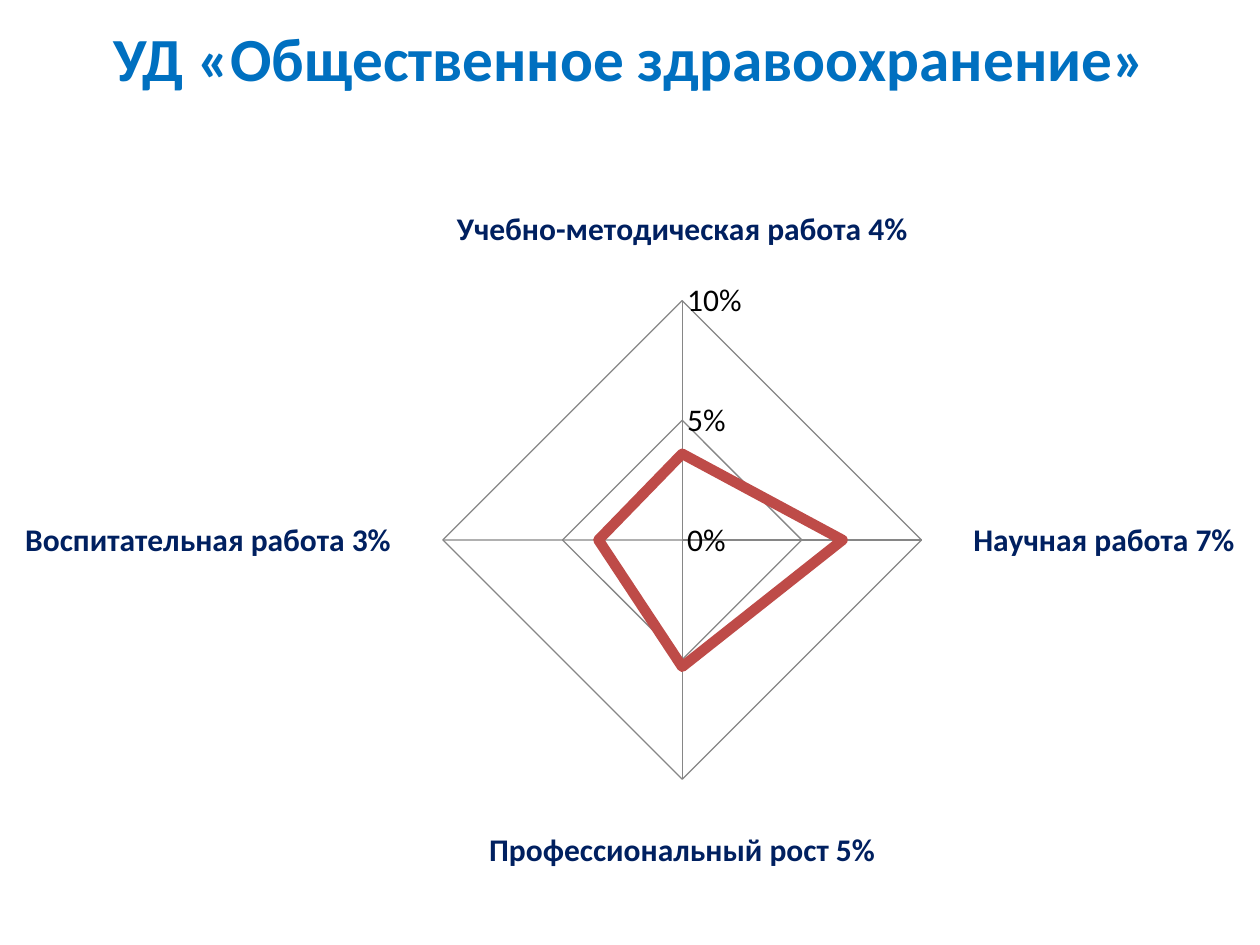
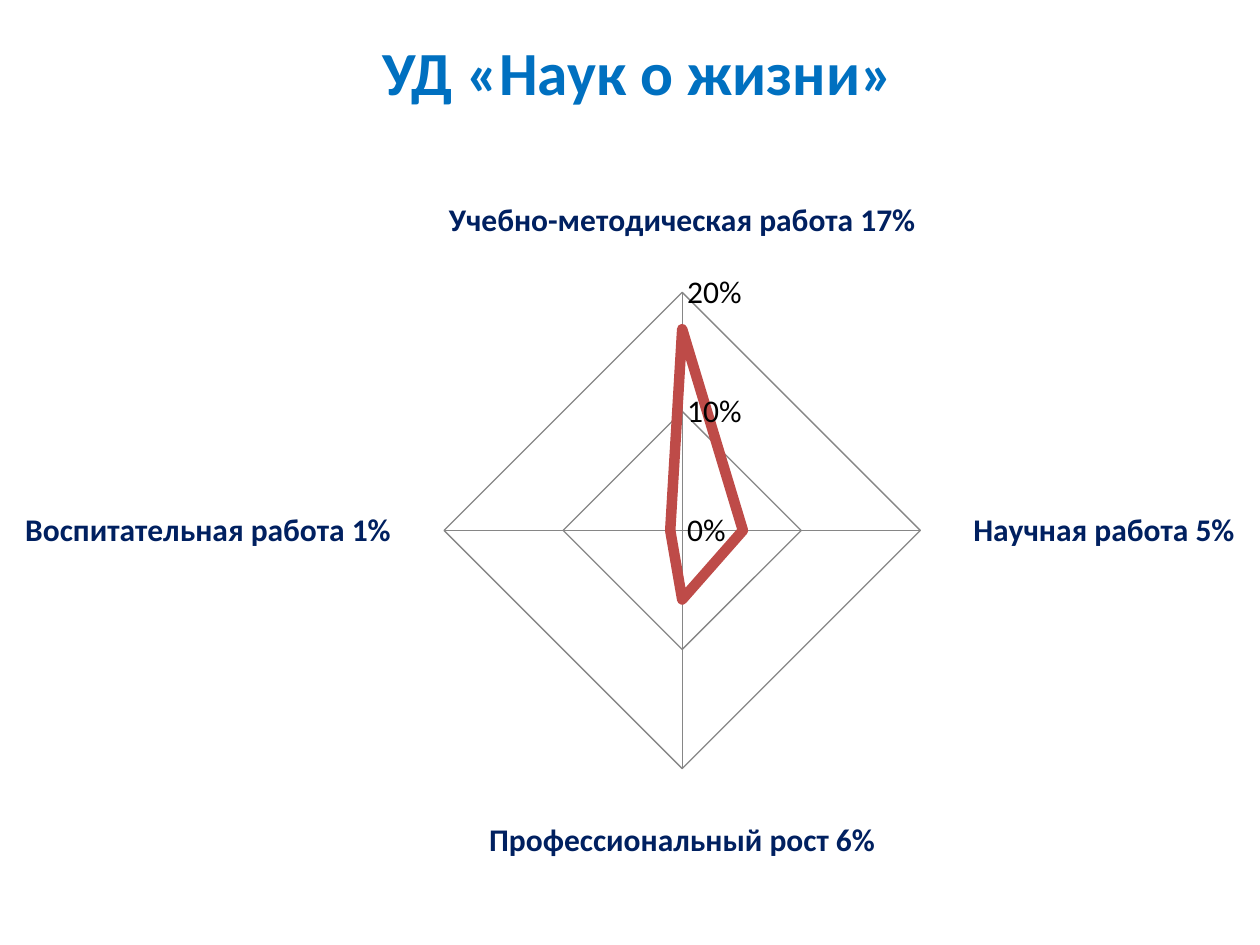
from pptx import Presentation
from pptx.chart.data import CategoryChartData
from pptx.dml.color import RGBColor
from pptx.enum.chart import XL_CHART_TYPE, XL_TICK_MARK
from pptx.enum.text import MSO_ANCHOR, MSO_AUTO_SIZE, PP_ALIGN
from pptx.util import Emu, Pt

RADAR = XL_CHART_TYPE.RADAR
NO_TICK = XL_TICK_MARK.NONE
MIDDLE = MSO_ANCHOR.MIDDLE
NO_FIT = MSO_AUTO_SIZE.NONE
CENTER = PP_ALIGN.CENTER

EMU_PER_PX = 914400 / 126
WIDTH, HEIGHT = 1260, 945
TITLE_ONLY = 5


class Theme:
    font = "Calibri"
    title_size, chart_size = Pt(35), Pt(18)
    grid_width, series_width = Pt(0.75), Pt(6)
    title = RGBColor.from_string("0070C0")
    category = RGBColor.from_string("002060")
    value = RGBColor.from_string("000000")
    grid = RGBColor.from_string("868686")
    series = RGBColor.from_string("BE4B48")


SLIDES = [
    {
        "title": "УД «Общественное здравоохранение»",
        "title_box": (0, 0, 1260, 115),
        "chart_top": 135,
        "scale_max": 0.1,
        "scores": [
            ("Учебно-методическая работа 4%", 0.036),
            ("Научная работа 7%", 0.067),
            ("Профессиональный рост 5%", 0.053),
            ("Воспитательная работа 3%", 0.035),
        ],
    },
    {
        "title": "УД «Наук о жизни»",
        "title_box": (71, 26, 1134, 90),
        "chart_top": 116,
        "scale_max": 0.2,
        "scores": [
            ("Учебно-методическая работа 17%", 0.169),
            ("Научная работа 5%", 0.051),
            ("Профессиональный рост 6%", 0.058),
            ("Воспитательная работа 1%", 0.01),
        ],
    },
]


def px(*lengths):
    return [Emu(round(n * EMU_PER_PX)) for n in lengths]


def set_all(target, **values):
    for name, value in values.items():
        setattr(target, name, value)


def set_font(font, size, color, bold):
    set_all(font, name=Theme.font, size=size, bold=bold)
    font.color.rgb = color


def set_line(line, color, width):
    line.color.rgb = color
    line.width = width


def add_title(slide, text, box):
    sp = slide.shapes.title
    left, top, width, height = px(*box)
    set_all(sp, left=left, top=top, width=width, height=height)
    tf = sp.text_frame
    set_all(tf, vertical_anchor=MIDDLE, word_wrap=True, auto_size=NO_FIT)
    p = tf.paragraphs[0]
    p.alignment = CENTER
    r = p.add_run()
    r.text = text
    set_font(r.font, Theme.title_size, Theme.title, True)


def add_radar(slide, scores, top, scale_max):
    """Fill the slide below top with a radar chart that has two rings."""
    labels, values = zip(*scores)
    data = CategoryChartData(number_format="0%")
    data.categories = labels
    data.add_series("Series 1", values)
    box = px(0, top, WIDTH, HEIGHT - top)
    chart = slide.shapes.add_chart(RADAR, *box, data).chart
    set_all(chart, has_legend=False, has_title=False)
    set_font(chart.font, Theme.chart_size, Theme.value, False)

    cat_axis, val_axis = chart.category_axis, chart.value_axis
    set_all(val_axis, minimum_scale=0, maximum_scale=scale_max,
            major_unit=scale_max / 2)
    set_all(val_axis.tick_labels, number_format="0%",
            number_format_is_linked=False)
    for axis, color, bold in ((cat_axis, Theme.category, True),
                              (val_axis, Theme.value, False)):
        set_all(axis, has_major_gridlines=True,
                major_tick_mark=NO_TICK, minor_tick_mark=NO_TICK)
        set_font(axis.tick_labels.font, Theme.chart_size, color, bold)
        for line in (axis.format.line, axis.major_gridlines.format.line):
            set_line(line, Theme.grid, Theme.grid_width)

    plot = chart.plots[0]
    plot.vary_by_categories = False
    set_line(plot.series[0].format.line, Theme.series, Theme.series_width)


def main():
    prs = Presentation()
    prs.slide_width, prs.slide_height = px(WIDTH, HEIGHT)
    for content in SLIDES:
        s = prs.slides.add_slide(prs.slide_layouts[TITLE_ONLY])
        add_title(s, content["title"], content["title_box"])
        add_radar(s, content["scores"], content["chart_top"],
                  content["scale_max"])
    prs.save("out.pptx")


if __name__ == "__main__":
    main()
